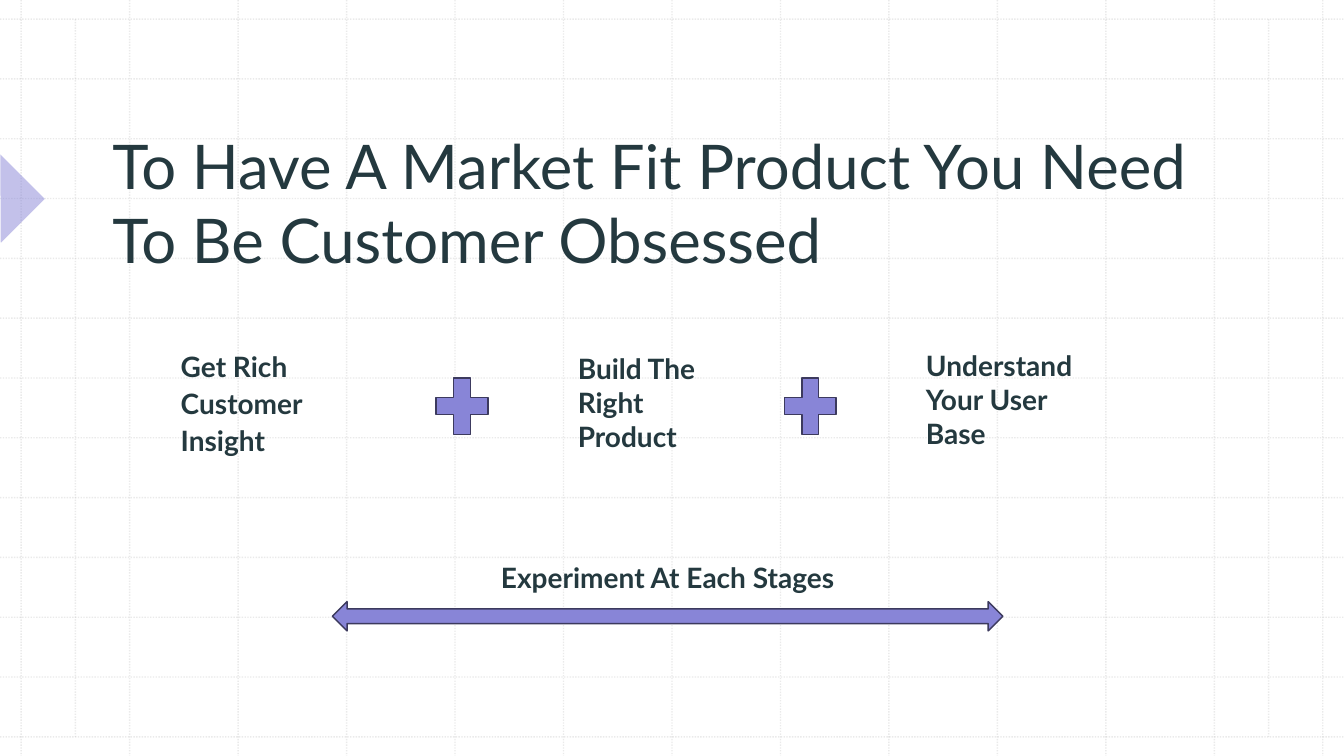
from dataclasses import dataclass

from lxml.etree import SubElement
from pptx import Presentation
from pptx.dml.color import RGBColor
from pptx.enum.dml import MSO_LINE
from pptx.enum.shapes import MSO_CONNECTOR, MSO_SHAPE as Preset
from pptx.enum.text import MSO_ANCHOR as Anchor, PP_ALIGN as Align
from pptx.oxml.ns import qn
from pptx.util import Inches, Pt

WIDTH, HEIGHT = 13.33, 7.5
# The background grid has 12 columns and 12 rows inside a thin margin
CELLS = 12
LEFT, TOP = 0.21, 0.19
COLUMN = (WIDTH - 2 * LEFT) / CELLS
ROW = (HEIGHT - 2 * TOP) / CELLS
EDGE_COLUMN, EDGE_ROW = LEFT / COLUMN, TOP / ROW
INK, VIOLET, OUTLINE, GRID = "24393F", "8885D7", "3C3A5E", "BCBCBC"


@dataclass
class Area:
    column: float
    row: float
    columns: float
    rows: float

    def place(self) -> tuple:
        return (x_at(self.column), y_at(self.row),
                Inches(self.columns * COLUMN), Inches(self.rows * ROW))


@dataclass
class Label:
    text: str
    area: Area
    spacing: float = 1.0
    align: Align = Align.LEFT


@dataclass
class Figure:
    preset: Preset
    area: Area


def x_at(column: float) -> int:
    return Inches(LEFT + column * COLUMN)


def y_at(row: float) -> int:
    return Inches(TOP + row * ROW)


def colour(value: str) -> RGBColor:
    return RGBColor.from_string(value)


def set_opacity(fill_parent, percent: int) -> None:
    tone = fill_parent.find(qn("a:solidFill"))[0]
    SubElement(tone, qn("a:alpha"), val=str(percent * 1000))


def add_grid_line(page, start: tuple, end: tuple) -> None:
    rule = page.shapes.add_connector(
        MSO_CONNECTOR.STRAIGHT, x_at(start[0]), y_at(start[1]),
        x_at(end[0]), y_at(end[1]))
    rule.line.color.rgb = colour(GRID)
    rule.line.width = Pt(1)
    rule.line.dash_style = MSO_LINE.ROUND_DOT
    properties = rule._element.spPr
    set_opacity(properties.find(qn("a:ln")), 30)
    SubElement(properties, qn("a:effectLst"))


def add_figure(page, figure: Figure, outlined: bool = True):
    shape = page.shapes.add_shape(figure.preset, *figure.area.place())
    shape.shadow.inherit = False
    shape.fill.solid()
    shape.fill.fore_color.rgb = colour(VIOLET)
    if outlined:
        shape.line.color.rgb = colour(OUTLINE)
        shape.line.width = Pt(1)
    else:
        shape.line.fill.background()
    return shape


def add_text(page, text: str, area: Area, *, size: int = 20,
             bold: bool = True, spacing: float = 1.0, before: int = 10,
             align: Align = Align.LEFT, anchor: Anchor = Anchor.TOP) -> None:
    box = page.shapes.add_textbox(*area.place())
    frame = box.text_frame
    frame.word_wrap = True
    frame.vertical_anchor = anchor
    para = frame.paragraphs[0]
    para.alignment = align
    para.line_spacing = spacing
    para.space_before = Pt(before)
    span = para.add_run()
    span.text = text
    span.font.name = "Lato"
    span.font.size = Pt(size)
    span.font.bold = bold
    span.font.color.rgb = colour(INK)


LABELS = [
    Label("Get Rich Customer Insight", Area(1.38, 5.39, 1.58, 2.14), 1.1),
    Label("Build The Right Product", Area(5.04, 5.48, 1.58, 1.95)),
    Label("Understand Your User Base", Area(8.25, 5.43, 1.58, 1.95)),
    Label("Experiment At Each Stages", Area(2.87, 8.91, 6.18, 0.83), 1.1,
          Align.CENTER),
]
FIGURES = [
    Figure(Preset.MATH_PLUS, Area(3.74, 5.83, 0.65, 1.28)),
    Figure(Preset.MATH_PLUS, Area(6.95, 5.83, 0.65, 1.28)),
    Figure(Preset.LEFT_RIGHT_ARROW, Area(2.87, 9.74, 6.18, 0.49)),
]


def main() -> None:
    deck = Presentation()
    deck.slide_width, deck.slide_height = Inches(WIDTH), Inches(HEIGHT)
    page = deck.slides.add_slide(deck.slide_layouts[6])

    # Background grid, with two half-column lines at the sides
    for step in range(CELLS + 1):
        add_grid_line(page, (step, -EDGE_ROW), (step, CELLS + EDGE_ROW))
        add_grid_line(page, (-EDGE_COLUMN, step), (CELLS + EDGE_COLUMN, step))
    for side in (0.5, CELLS - 0.5):
        add_grid_line(page, (side, 0), (side, CELLS))

    # Marker pointing at the title from the slide's edge
    marker = add_figure(page, Figure(Preset.RIGHT_TRIANGLE,
                                     Area(-0.48, 2.48, 0.58, 1.04)), False)
    marker.rotation = 225
    set_opacity(marker._element.spPr, 50)

    # Title
    add_text(page, "To Have A Market Fit Product You Need To Be Customer Obsessed",
             Area(0.75, 1.71, 10.23, 2.66), size=44, bold=False, before=0,
             anchor=Anchor.BOTTOM)

    # Steps, plus signs and the arrow below them
    for label in LABELS:
        add_text(page, label.text, label.area, spacing=label.spacing,
                 align=label.align)
    for figure in FIGURES:
        add_figure(page, figure)

    deck.save("out.pptx")


if __name__ == "__main__":
    main()
